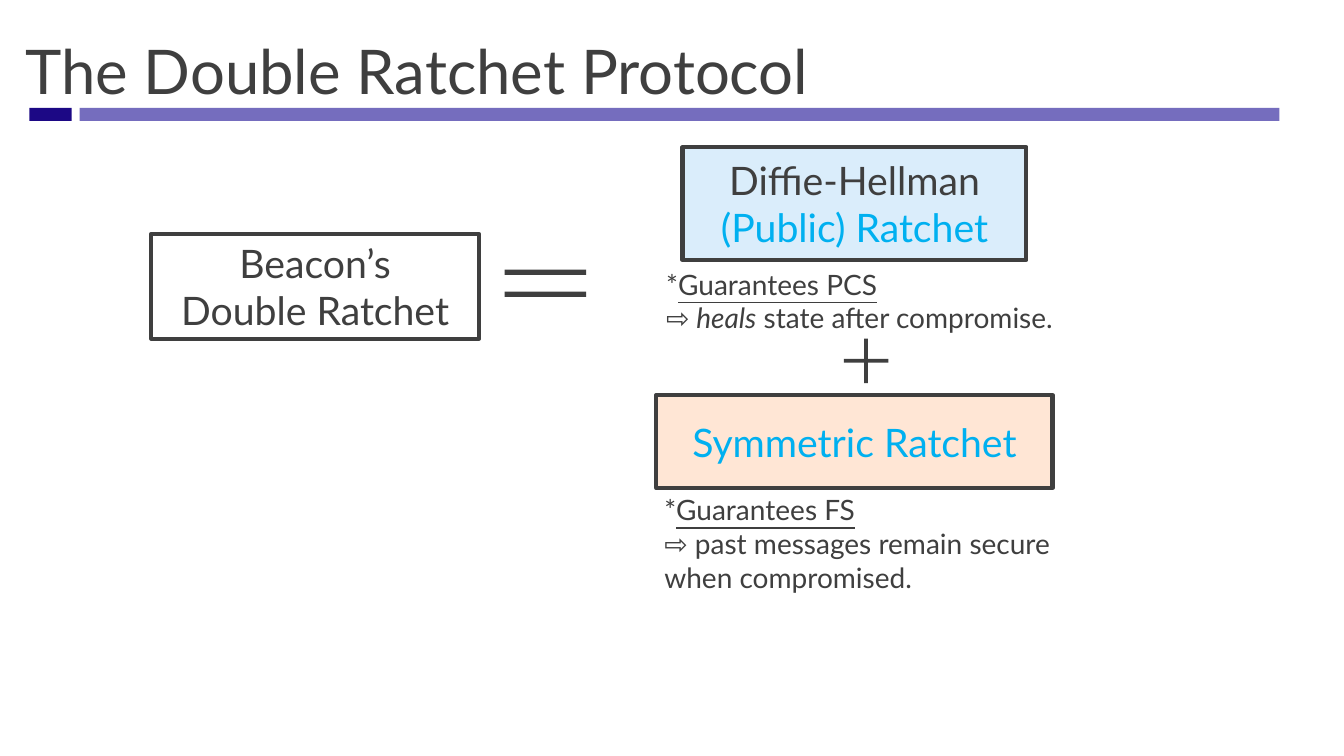
from lxml import etree
from pptx import Presentation
from pptx import util as u
from pptx.dml.color import RGBColor
from pptx.enum import shapes, text
from pptx.oxml.ns import qn

FONT = "Lato"
DARK, CYAN = "3F3F3F", "00B0F0"
SHAPE = shapes.MSO_SHAPE

TITLE = "The Double Ratchet Protocol"

# (left, top, width, height), fill, opacity in percent
BARS = [
    ((0.29, 1.07, 0.42, 0.13), "1C0885", 100),
    ((0.79, 1.07, 11.9, 0.13), "665EB8", 90),
]

# preset, (left, top, width, height), adjustments
OPERATORS = [
    (SHAPE.CROSS, (8.37, 3.36, 0.44, 0.44), [0.459]),
    (SHAPE.MATH_EQUAL, (4.86, 2.39, 1.1, 0.84), [0.061, 0.199]),
]

# Each line is a list of runs: (words, style)
NOTES = [
    ((6.51, 2.6, 4.16, 0.77), [
        [("*", ""), ("Guarantees PCS", "underline")],
        [("⇨", ""), (" heals", "italic"), (" state after compromise.", "")],
    ]),
    ((6.49, 4.84, 4.16, 1.11), [
        [("*", ""), ("Guarantees FS", "underline")],
        [("⇨ past messages remain secure when compromised.", "")],
    ]),
]

# (left, top, width, height), fill, lines of (words, colour)
BOXES = [
    ((1.5, 2.32, 3.25, 1.04), None, [("Beacon’s", DARK), ("Double Ratchet", DARK)]),
    ((6.51, 3.92, 3.93, 0.92), "FFE6D5", [("Symmetric Ratchet", CYAN)]),
    ((6.77, 1.46, 3.41, 1.12), "DAEDFB",
     [("Diffie-Hellman", DARK), ("(Public) Ratchet", CYAN)]),
]


def rgb(colour):
    return RGBColor.from_string(colour)


def inches(place):
    return [u.Inches(length) for length in place]


def add_run(paragraph, words, size, colour=DARK, style=""):
    run = paragraph.add_run()
    run.text = words
    run.font.name = FONT
    run.font.size = u.Pt(size)
    run.font.color.rgb = rgb(colour)
    if style:
        setattr(run.font, style, True)


def paragraphs_for(frame, lines):
    """Yield a paragraph of the frame with each line."""
    for index, line in enumerate(lines):
        yield (frame.add_paragraph() if index else frame.paragraphs[0]), line


def add_shape(slide, preset, place, fill, outline=None):
    shape = slide.shapes.add_shape(preset, *inches(place))
    shape.shadow.inherit = False
    if fill:
        shape.fill.solid()
        shape.fill.fore_color.rgb = rgb(fill)
    else:
        shape.fill.background()
    if outline:
        shape.line.color.rgb = rgb(outline)
        shape.line.width = u.Pt(3)
    else:
        shape.line.fill.background()
    return shape


def set_opacity(shape, percent):
    colour = shape.fill._xPr.find(qn("a:solidFill"))[0]
    etree.SubElement(colour, qn("a:alpha")).set("val", str(percent * 1000))


def add_title(slide):
    title = slide.shapes.title
    title.left, title.top, title.width, title.height = inches((0.25, 0.34, 12.56, 0.71))
    frame = title.text_frame
    frame.margin_left = frame.margin_right = frame.margin_top = frame.margin_bottom = 0
    frame.vertical_anchor = text.MSO_ANCHOR.MIDDLE
    frame.auto_size = text.MSO_AUTO_SIZE.NONE
    paragraph = frame.paragraphs[0]
    paragraph.alignment = text.PP_ALIGN.LEFT
    add_run(paragraph, TITLE, 44)


def add_note(slide, place, lines):
    frame = slide.shapes.add_textbox(*inches(place)).text_frame
    frame.word_wrap = True
    frame.auto_size = text.MSO_AUTO_SIZE.SHAPE_TO_FIT_TEXT
    for paragraph, runs in paragraphs_for(frame, lines):
        for words, style in runs:
            add_run(paragraph, words, 20, style=style)


def add_box(slide, place, fill, lines):
    frame = add_shape(slide, SHAPE.RECTANGLE, place, fill, DARK).text_frame
    frame.word_wrap = True
    frame.vertical_anchor = text.MSO_ANCHOR.MIDDLE
    for paragraph, (words, colour) in paragraphs_for(frame, lines):
        paragraph.alignment = text.PP_ALIGN.CENTER
        add_run(paragraph, words, 28, colour)


def main():
    presentation = Presentation()
    presentation.slide_width, presentation.slide_height = inches((13.33, 7.5))
    slide = presentation.slides.add_slide(presentation.slide_layouts[5])
    add_title(slide)
    for place, fill, opacity in BARS:
        bar = add_shape(slide, SHAPE.RECTANGLE, place, fill)
        if opacity < 100:
            set_opacity(bar, opacity)
    for preset, place, adjustments in OPERATORS:
        operator = add_shape(slide, preset, place, DARK)
        for index, value in enumerate(adjustments):
            operator.adjustments[index] = value
    for note in NOTES:
        add_note(slide, *note)
    for box in BOXES:
        add_box(slide, *box)
    presentation.save("out.pptx")


if __name__ == "__main__":
    main()
